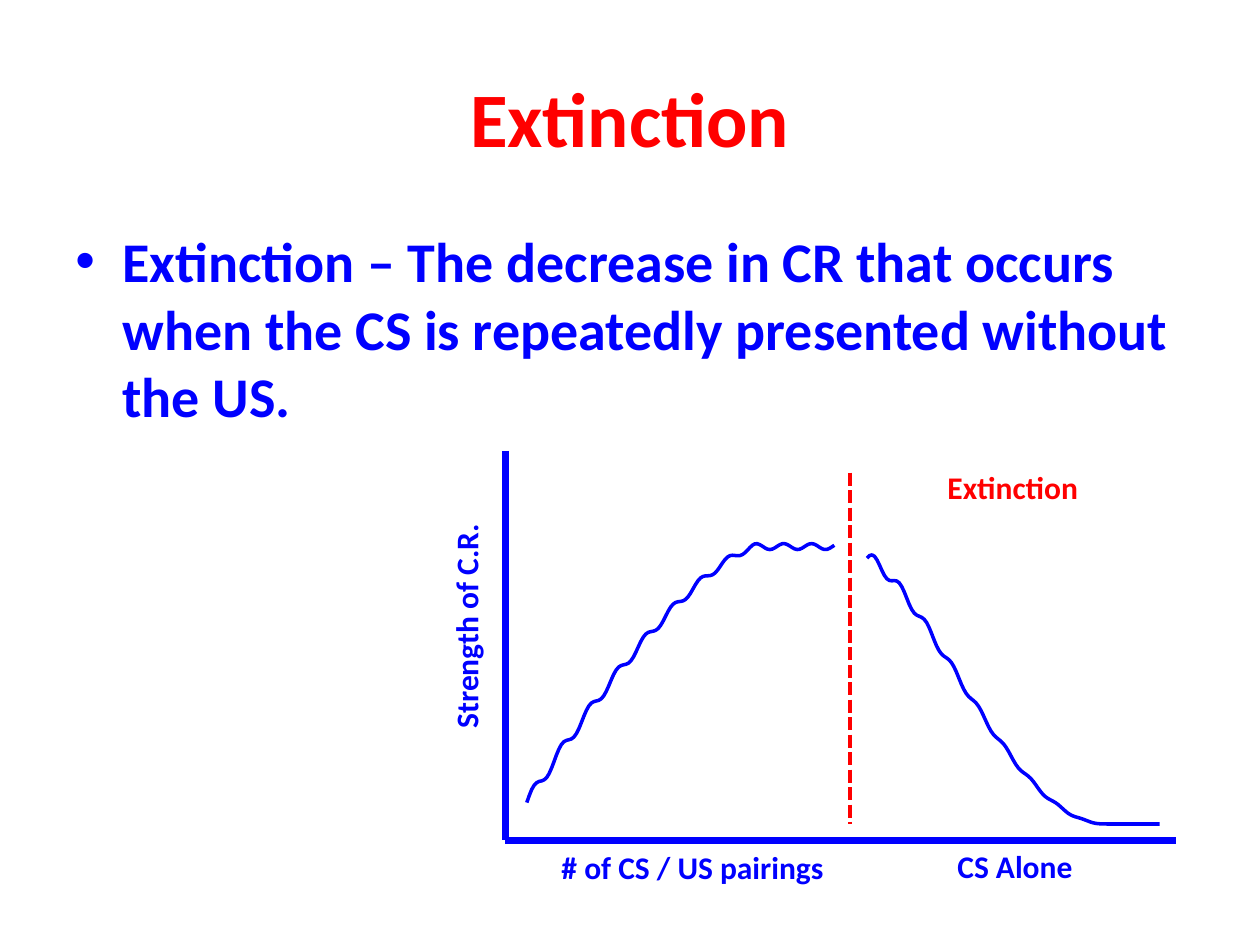
import math

from lxml import etree
from pptx import Presentation, util as u
from pptx.dml.color import RGBColor
from pptx.enum import dml, shapes, text
from pptx.oxml import ns

RED = RGBColor(255, 0, 0)
BLUE = RGBColor(0, 0, 255)

deck = Presentation()
deck.slide_width, deck.slide_height = u.Cm(25.4), u.Cm(19.05)
slide = deck.slides.add_slide(deck.slide_layouts[6])


def add_text(words, size, color, left, top, width, height, wrap=False):
    box = slide.shapes.add_textbox(*map(u.Cm, (left, top, width, height)))
    box.text_frame.word_wrap = wrap
    run = box.text_frame.paragraphs[0].add_run()
    run.text = words
    run.font.name = "Calibri"
    run.font.size = u.Pt(size)
    run.font.bold = True
    run.font.color.rgb = color
    return box


def add_line(color, width, *ends):
    line = slide.shapes.add_connector(shapes.MSO_CONNECTOR.STRAIGHT, *map(u.Cm, ends))
    line.line.color.rgb = color
    line.line.width = u.Pt(width)
    etree.SubElement(line._element.spPr, ns.qn("a:effectLst"))
    return line


# Title and definition
margin, wide = 1.27, 22.86
title = add_text("Extinction", 44, RED, margin, 0.76, wide, 3.18, True)
title.text_frame.vertical_anchor = text.MSO_ANCHOR.MIDDLE
title.text_frame.paragraphs[0].alignment = text.PP_ALIGN.CENTER

body = add_text(
    "Extinction – The decrease in CR that occurs when the CS is "
    "repeatedly presented without the US.",
    32, BLUE, margin, 4.45, wide, 12.57, True)
indent = u.Cm(0.95)
props = body.text_frame.paragraphs[0]._p.get_or_add_pPr()
props.set("marL", str(indent))
props.set("indent", str(-indent))
etree.SubElement(props, ns.qn("a:buFont"), typeface="Arial")
etree.SubElement(props, ns.qn("a:buChar"), char="•")

# Axes and the divide between the two phases
left, right, top, base = 10.19, 23.7, 9.09, 16.94
divide = 17.14
add_line(BLUE, 4, left, top, left, base)
add_line(BLUE, 4, right, base, left, base)
split = add_line(RED, 2.5, divide, 9.53, divide, 16.61)
split.line.dash_style = dml.MSO_LINE.SQUARE_DOT

# Graph labels
high = 1.02
axis = add_text("Strength of C.R.", 18, BLUE, 7.06, 12.09, 4.67, high)
axis.rotation = 270
add_text("# of CS / US pairings", 18, BLUE, 11.07, 16.97, 5.84, high)
add_text("CS Alone", 18, BLUE, 19.05, 16.96, 2.84, high)
add_text("Extinction", 18, RED, 18.85, 9.32, 3.18, high)

# Each response follows a trend from its first to its last level, then stays
# flat from "settle" to "end". A sine ripple makes it uneven and fades out.
learn = dict(start=10.62, settle=15.24, end=16.81, first=16.18, last=11.02,
             wave=0.56, fade=0.5, trend=lambda t: 1 - (1 - t) ** 1.4)
forget = dict(start=17.48, settle=22.3, end=23.37, first=11.25, last=16.61,
              wave=0.53, fade=1, trend=lambda t: math.sin(math.pi / 2 * t) ** 1.4)
ripple, step = 0.12, 0.05

for phase in (learn, forget):
    start, first = phase["start"], phase["first"]
    count = round((phase["end"] - start) / step)
    points = []
    for index in range(count + 1):
        x = start + index * step
        t = min(1, (x - start) / (phase["settle"] - start))
        level = first + (phase["last"] - first) * phase["trend"](t)
        size = ripple * (1 - phase["fade"] * t)
        y = level - size * math.sin(2 * math.pi * (x - start) / phase["wave"])
        points.append((u.Cm(x), u.Cm(y)))
    pen = slide.shapes.build_freeform(*points[0])
    pen.add_line_segments(points[1:], close=False)
    curve = pen.convert_to_shape()
    curve.shadow.inherit = False
    curve.fill.background()
    curve.line.color.rgb = BLUE
    curve.line.width = u.Pt(2)

deck.save("out.pptx")
